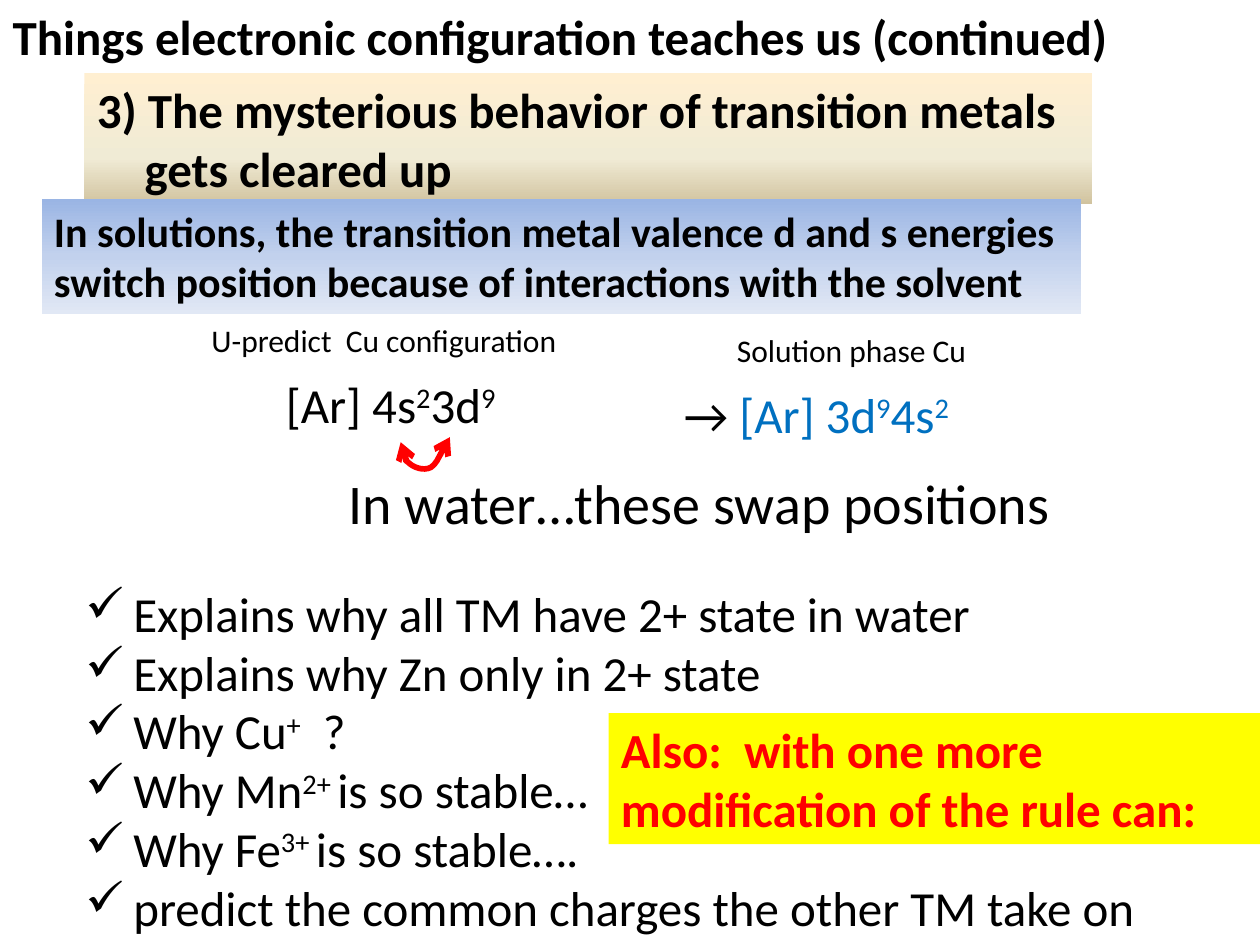
from lxml import etree
from pptx import Presentation
from pptx.dml.color import RGBColor
from pptx.enum.shapes import MSO_SHAPE
from pptx.enum.text import MSO_ANCHOR, MSO_AUTO_SIZE, PP_ALIGN
from pptx.oxml.ns import qn
from pptx.util import Inches, Pt

RECTANGLE = MSO_SHAPE.RECTANGLE
TOP = MSO_ANCHOR.TOP
GROW = MSO_AUTO_SIZE.SHAPE_TO_FIT_TEXT
LEFT = PP_ALIGN.LEFT

FONT = "Calibri"
COLORS = {"text": "000000", "solution": "0070C0", "accent": "FF0000", "callout": "FFFF00"}
SAND = [(0, "FFEFD1"), (65, "F0EBD5"), (100, "D1C39F")]
SKY = [(0, "9AB5E4"), (50, "C2D1ED"), (100, "E1E8F5")]
HANGING = Inches(0.38)

CHECKLIST = [
    "Explains why all TM have 2+ state in water",
    "Explains why Zn only in 2+ state",
    "Why Cu^+^  ?",
    "Why Mn^2+ ^is so stable…",
    "Why Fe^3+ ^is so stable….",
    "predict the common charges the other TM take on",
]


def rgb(name):
    return RGBColor.from_string(COLORS[name])


def write(box, lines, size, color="text", bold=False):
    frame = box.text_frame
    frame.word_wrap = True
    frame.auto_size = GROW
    frame.vertical_anchor = TOP
    for index, line in enumerate(lines):
        para = frame.paragraphs[0] if index == 0 else frame.add_paragraph()
        para.alignment = LEFT
        for position, part in enumerate(line.split("^")):
            if not part:
                continue
            span = para.add_run()
            span.text = part
            font = span.font
            font.name, font.size, font.bold = FONT, Pt(size), bold
            font.color.rgb = rgb(color)
            if position % 2:
                span._r.get_or_add_rPr().set("baseline", "30000")


def hang(para, bullet=None):
    properties = para._p.get_or_add_pPr()
    properties.set("marL", str(HANGING))
    properties.set("indent", str(-HANGING))
    if bullet:
        etree.SubElement(properties, qn("a:buChar")).set("char", bullet)


def add_text(page, area, lines, size):
    box = page.shapes.add_textbox(*map(Inches, area))
    write(box, lines, size)
    return box


def add_banner(page, area, line, size, color="text"):
    box = page.shapes.add_shape(RECTANGLE, *map(Inches, area))
    box.shadow.inherit = False
    box.line.fill.background()
    write(box, [line], size, color, bold=True)
    return box


def fill_gradient(box, stops):
    box.fill.gradient()
    box.fill.gradient_angle = 270
    stop_list = box._element.spPr.find(".//" + qn("a:gsLst"))
    for stop in list(stop_list):
        stop_list.remove(stop)
    for percent, color in stops:
        stop = etree.SubElement(stop_list, qn("a:gs"), pos=str(percent * 1000))
        etree.SubElement(stop, qn("a:srgbClr"), val=color)


def add_title(page, area):
    title = page.shapes.title
    title.left, title.top, title.width, title.height = map(Inches, area)
    write(title, ["Things electronic configuration teaches us (continued)"], 28, bold=True)


def add_headings(page):
    topic = add_banner(page, (0.67, 0.58, 8, 1.04),
                       "3) The mysterious behavior of transition metals gets cleared up", 28)
    hang(topic.text_frame.paragraphs[0])
    fill_gradient(topic, SAND)
    reason = add_banner(page, (0.33, 1.58, 8.25, 0.91),
                        "In solutions, the transition metal valence d and s energies "
                        "switch position because of interactions with the solvent", 24)
    fill_gradient(reason, SKY)


def add_swap_arrow(page, left, top):
    curve = [(0, 0.04), (0.01, 0.1), (0.02, 0.17), (0.06, 0.2),
             (0.1, 0.24), (0.18, 0.27), (0.24, 0.24),
             (0.29, 0.2), (0.39, 0), (0.39, 0)]
    points = [(Inches(left + x), Inches(top + y)) for x, y in curve]
    builder = page.shapes.build_freeform(*points[0])
    builder.add_line_segments(points[1:], close=False)
    arrow = builder.convert_to_shape()
    arrow.shadow.inherit = False
    arrow.fill.background()
    arrow.line.color.rgb = rgb("accent")
    arrow.line.width = Pt(3.25)

    outline = arrow._element.spPr.find(".//" + qn("a:path"))
    segments = outline.findall(qn("a:lnTo"))
    for start in range(0, len(segments), 3):
        bezier = etree.SubElement(outline, qn("a:cubicBezTo"))
        for segment in segments[start:start + 3]:
            bezier.append(segment[0])
            outline.remove(segment)
    line = arrow.line._get_or_add_ln()
    for end in ("a:headEnd", "a:tailEnd"):
        etree.SubElement(line, qn(end), type="arrow")


def add_configurations(page):
    add_text(page, (2.17, 2.92, 2.33, 0.57), ["[Ar] 4s^2^3d^9^"], 28)
    add_text(page, (1.58, 2.5, 3.83, 0.4), ["U-predict  Cu configuration"], 18)
    solution = add_text(page, (5.33, 3, 2.67, 0.57), ["→ ^^[Ar] 3d^9^4s^2^"], 28)
    for span in solution.text_frame.paragraphs[0].runs[1:]:
        span.font.color.rgb = rgb("solution")
    add_swap_arrow(page, 3.18, 3.47)
    add_text(page, (2.67, 3.67, 7, 0.64), ["In water…these swap positions"], 32)
    add_text(page, (5.75, 2.58, 2.5, 0.4), ["Solution phase Cu"], 18)


def add_checklist(page, area):
    box = add_text(page, area, CHECKLIST, 28)
    for para in box.text_frame.paragraphs:
        hang(para, "✓")


def add_callout(page, area):
    box = add_banner(page, area, "Also:  with one more modification of the rule can:", 28, "accent")
    box.fill.solid()
    box.fill.fore_color.rgb = rgb("callout")


def main():
    deck = Presentation()
    deck.slide_width, deck.slide_height = Inches(10), Inches(7.5)
    page = deck.slides.add_slide(deck.slide_layouts[5])
    add_title(page, (0, 0, 10, 0.57))
    add_headings(page)
    add_configurations(page)
    add_checklist(page, (0.58, 4.58, 9.75, 2.93))
    add_callout(page, (4.83, 5.66, 5.25, 1.04))
    deck.save("out.pptx")


if __name__ == "__main__":
    main()
